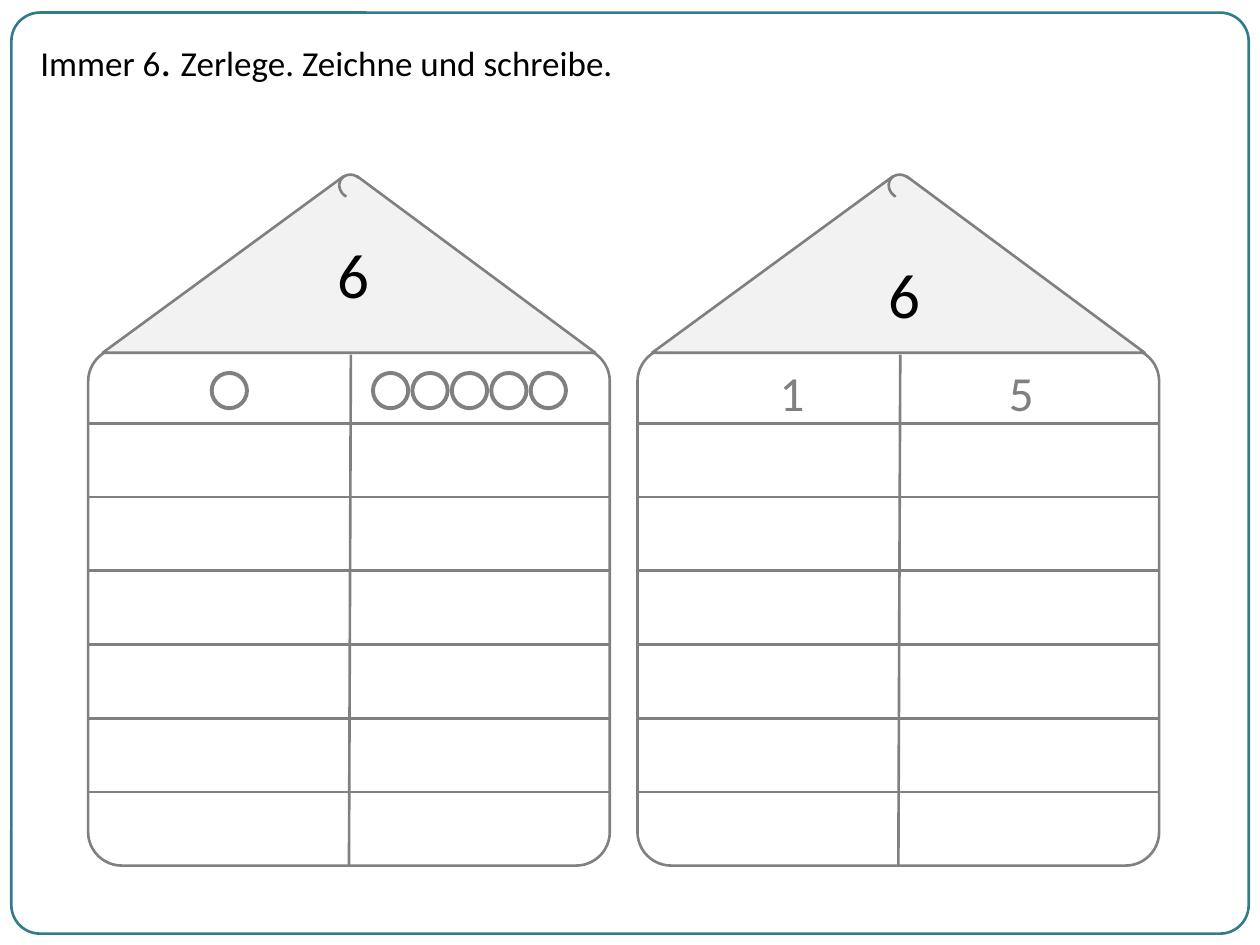
from lxml import etree
from pptx import Presentation
from pptx.dml.color import RGBColor
from pptx.enum.shapes import MSO_CONNECTOR, MSO_SHAPE
from pptx.enum.text import MSO_ANCHOR, MSO_AUTO_SIZE, PP_ALIGN
from pptx.oxml.ns import qn
from pptx.util import Inches, Pt

ROUNDED = MSO_SHAPE.ROUNDED_RECTANGLE
TRIANGLE = MSO_SHAPE.ISOSCELES_TRIANGLE
RECTANGLE = MSO_SHAPE.RECTANGLE
ARC = MSO_SHAPE.ARC
OVAL = MSO_SHAPE.OVAL
STRAIGHT = MSO_CONNECTOR.STRAIGHT
LEFT, CENTER = PP_ALIGN.LEFT, PP_ALIGN.CENTER
TOP = MSO_ANCHOR.TOP
FIT_SHAPE = MSO_AUTO_SIZE.SHAPE_TO_FIT_TEXT
BOTTOM_SITE = 2
COLUMNS, ROWS = 100, 75

TEAL, GRAY, ROOF_FILL, WHITE, BLACK = "327B8A", "808080", "F2F2F2", "FFFFFF", "000000"


def color(hex_value):
    return RGBColor.from_string(hex_value)


class Worksheet:
    font = "Calibri"
    thin, thick = 1.5, 2.25

    def __init__(self):
        self.deck = Presentation()
        self.deck.slide_width, self.deck.slide_height = Inches(10), Inches(7.5)
        self.slide = self.deck.slides.add_slide(self.deck.slide_layouts[5])

    def x(self, columns):
        return round(self.deck.slide_width * columns / COLUMNS)

    def y(self, rows):
        return round(self.deck.slide_height * rows / ROWS)

    def box(self, left, top, width, height):
        return self.x(left), self.y(top), self.x(width), self.y(height)

    def outline(self, kind, area, line=GRAY, fill=None, width=thin, adjust=(), parent=None):
        shape = (parent or self.slide).shapes.add_shape(kind, *self.box(*area))
        shape.shadow.inherit = False
        for index, value in enumerate(adjust):
            shape.adjustments[index] = value
        if fill:
            shape.fill.solid()
            shape.fill.fore_color.rgb = color(fill)
        else:
            shape.fill.background()
        if line:
            shape.line.color.rgb = color(line)
            shape.line.width = Pt(width)
        else:
            shape.line.fill.background()
        return shape

    def rule(self, start, end, parent=None):
        ends = self.x(start[0]), self.y(start[1]), self.x(end[0]), self.y(end[1])
        connector = (parent or self.slide).shapes.add_connector(STRAIGHT, *ends)
        connector.line.color.rgb = color(GRAY)
        connector.line.width = Pt(self.thin)
        etree.SubElement(connector._element.spPr, qn("a:effectLst"))
        return connector

    def add_runs(self, frame, runs, ink, align):
        frame.word_wrap = True
        frame.auto_size = FIT_SHAPE
        frame.vertical_anchor = TOP
        paragraph = frame.paragraphs[0]
        paragraph.alignment = align
        for text, size in runs:
            run = paragraph.add_run()
            run.text = text
            run.font.name = self.font
            run.font.size = Pt(size)
            run.font.color.rgb = color(ink)

    def title(self, area, runs):
        heading = self.slide.shapes.title
        heading.left, heading.top, heading.width, heading.height = self.box(*area)
        self.add_runs(heading.text_frame, runs, BLACK, LEFT)

    def number(self, area, text, size, ink=BLACK, parent=None):
        label = (parent or self.slide).shapes.add_textbox(*self.box(*area))
        self.add_runs(label.text_frame, [(text, size)], ink, CENTER)

    def house(self, left, number_left, number_top):
        group = self.slide.shapes.add_group_shape()
        body = self.outline(ROUNDED, (left, 27.6, 41.4, 41.1), adjust=[0.065], parent=group)
        self.outline(TRIANGLE, (left + 1.15, 13.6, 39.1, 14.4), fill=ROOF_FILL,
                     adjust=[0.503], parent=group)
        self.outline(RECTANGLE, (left + 19.8, 12.9, 1.8, 1), line=None, fill=WHITE, parent=group)
        for row in range(6):
            height = 33.6 + 5.85 * row
            self.rule((left, height), (left + 41.4, height), parent=group)
        ridge = self.outline(ARC, (left + 20, 13.8, 1.8, 2), adjust=[100.19, 0], parent=group)
        ridge.rotation = 309.6
        self.number((number_left, number_top, 9.5, 7.1), "6", 36, parent=group)
        divider = self.rule((left + 20.85, 28.15), (left + 20.7, 68.7))
        divider.end_connect(body, BOTTOM_SITE)

    def counter(self, left):
        self.outline(OVAL, (left, 29.6, 2.8, 2.8), width=self.thick)


def main():
    sheet = Worksheet()
    sheet.outline(ROUNDED, (0.9, 1, 98.2, 73.1), line=TEAL, adjust=[0.031])
    sheet.title((2.2, 2.2, 83.1, 5),
                [("Immer 6", 20), (". ", 24), ("Zerlege. Zeichne und schreibe.", 20)])

    sheet.house(7, 23.3, 18.2)
    sheet.counter(16.8)
    for position in range(5):
        sheet.counter(29.6 + 3.13 * position)

    sheet.house(50.6, 67, 19.8)
    for left, addend in ((58.1, "1"), (76.3, "5")):
        sheet.number((left, 28.3, 9.5, 5.7), addend, 28, GRAY)

    sheet.deck.save("out.pptx")


if __name__ == "__main__":
    main()
